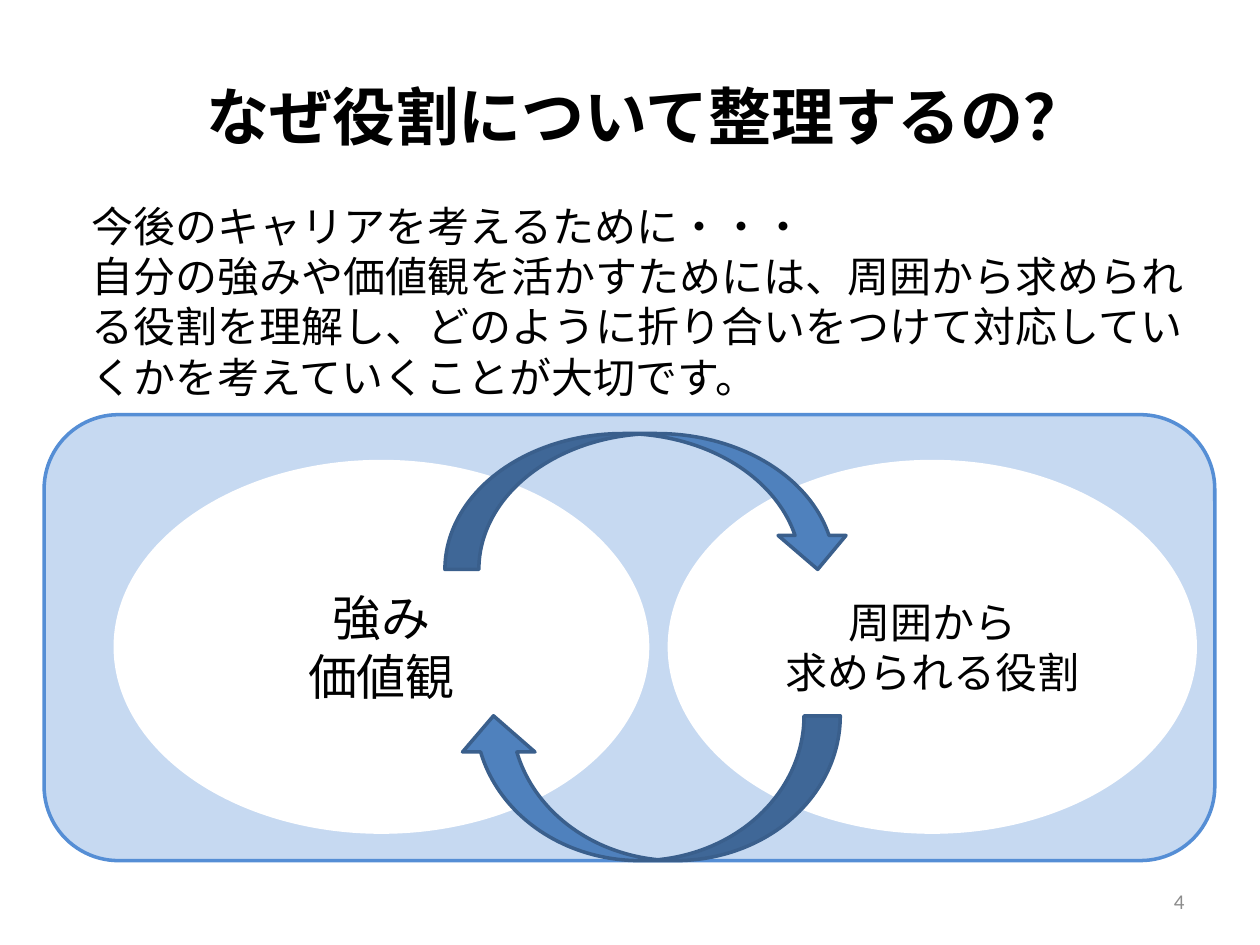
from dataclasses import dataclass
from typing import Any

from pptx import Presentation
from pptx.dml.color import RGBColor
from pptx.enum.shapes import MSO_SHAPE
from pptx.enum.text import MSO_ANCHOR, PP_ALIGN
from pptx.util import Cm, Pt

BLACK = RGBColor(0x00, 0x00, 0x00)
WHITE = RGBColor(0xFF, 0xFF, 0xFF)
GREY = RGBColor(0x8C, 0x8C, 0x8C)
PALE_BLUE = RGBColor(0xC6, 0xD9, 0xF1)
BORDER_BLUE = RGBColor(0x55, 0x8E, 0xD5)
ARROW_BLUE = RGBColor(0x4F, 0x81, 0xBD)
DARK_BLUE = RGBColor(0x3A, 0x5F, 0x8C)


@dataclass
class SlideBuilder:
    """Holds the text style and the slide being built."""

    slide: Any
    font: str = "Calibri"
    line_width: float = 2

    def fill_text(self, box, lines, size, color=BLACK, align=PP_ALIGN.CENTER,
                  anchor=MSO_ANCHOR.MIDDLE, bold=False):
        frame = box.text_frame
        frame.word_wrap = True
        frame.vertical_anchor = anchor
        frame.text = "\n".join(lines)
        style = {"name": self.font, "size": Pt(size), "bold": bold}
        for para in frame.paragraphs:
            para.alignment = align
            for span in para.runs:
                span.font.color.rgb = color
                for name, value in style.items():
                    setattr(span.font, name, value)

    def title(self, text, place, size):
        box = self.slide.shapes.title
        for name, value in zip(("left", "top", "width", "height"), place):
            setattr(box, name, Cm(value))
        self.fill_text(box, [text], size, bold=True)

    def text(self, lines, place, size, **style):
        box = self.slide.shapes.add_textbox(*map(Cm, place))
        self.fill_text(box, lines, size, **style)

    def shape(self, kind, place, fill, line=None, parent=None):
        box = (parent or self.slide).shapes.add_shape(kind, *map(Cm, place))
        box.shadow.inherit = False
        box.fill.solid()
        box.fill.fore_color.rgb = fill
        if line is None:
            box.line.fill.background()
        else:
            box.line.color.rgb = line
            box.line.width = Pt(self.line_width)
        return box

    def ellipse(self, lines, left, width, size, parent):
        place = (left, 9.27, width, 7.54)
        box = self.shape(MSO_SHAPE.OVAL, place, WHITE, parent=parent)
        self.fill_text(box, lines, size)

    def arrow(self, kind, place, flipped=False):
        box = self.shape(kind, place, ARROW_BLUE, DARK_BLUE)
        if flipped:
            box.element.spPr.xfrm.set("flipH", "1")


def main():
    deck = Presentation()
    deck.slide_width, deck.slide_height = Cm(25.4), Cm(19.05)
    page = SlideBuilder(deck.slides.add_slide(deck.slide_layouts[5]))

    page.title("なぜ役割について整理するの？", (1.6, 0.74, 22.86, 3.18), 36)
    page.text(["4"], (18.21, 17.65, 5.92, 1.02), 12,
              color=GREY, align=PP_ALIGN.RIGHT)

    group = page.slide.shapes.add_group_shape()
    page.shape(MSO_SHAPE.ROUNDED_RECTANGLE, (0.89, 8.36, 23.6, 8.99),
               PALE_BLUE, BORDER_BLUE, group)
    page.ellipse(["周囲から", "求められる役割"], 13.46, 10.67, 24, group)
    page.ellipse(["強み", "価値観"], 2.29, 10.8, 28, group)

    page.text(
        ["今後のキャリアを考えるために・・・",
         "自分の強みや価値観を活かすためには、周囲から求められる役割を理解し、"
         "どのように折り合いをつけて対応していくかを考えていくことが大切です。"],
        (1.6, 3.91, 23.11, 4.37), 24,
        align=PP_ALIGN.LEFT, anchor=MSO_ANCHOR.TOP)

    page.arrow(MSO_SHAPE.CURVED_DOWN_ARROW, (8.97, 8.74, 8.2, 2.74))
    page.arrow(MSO_SHAPE.CURVED_UP_ARROW, (9.22, 14.43, 7.72, 2.92), True)

    deck.save("out.pptx")


if __name__ == "__main__":
    main()
